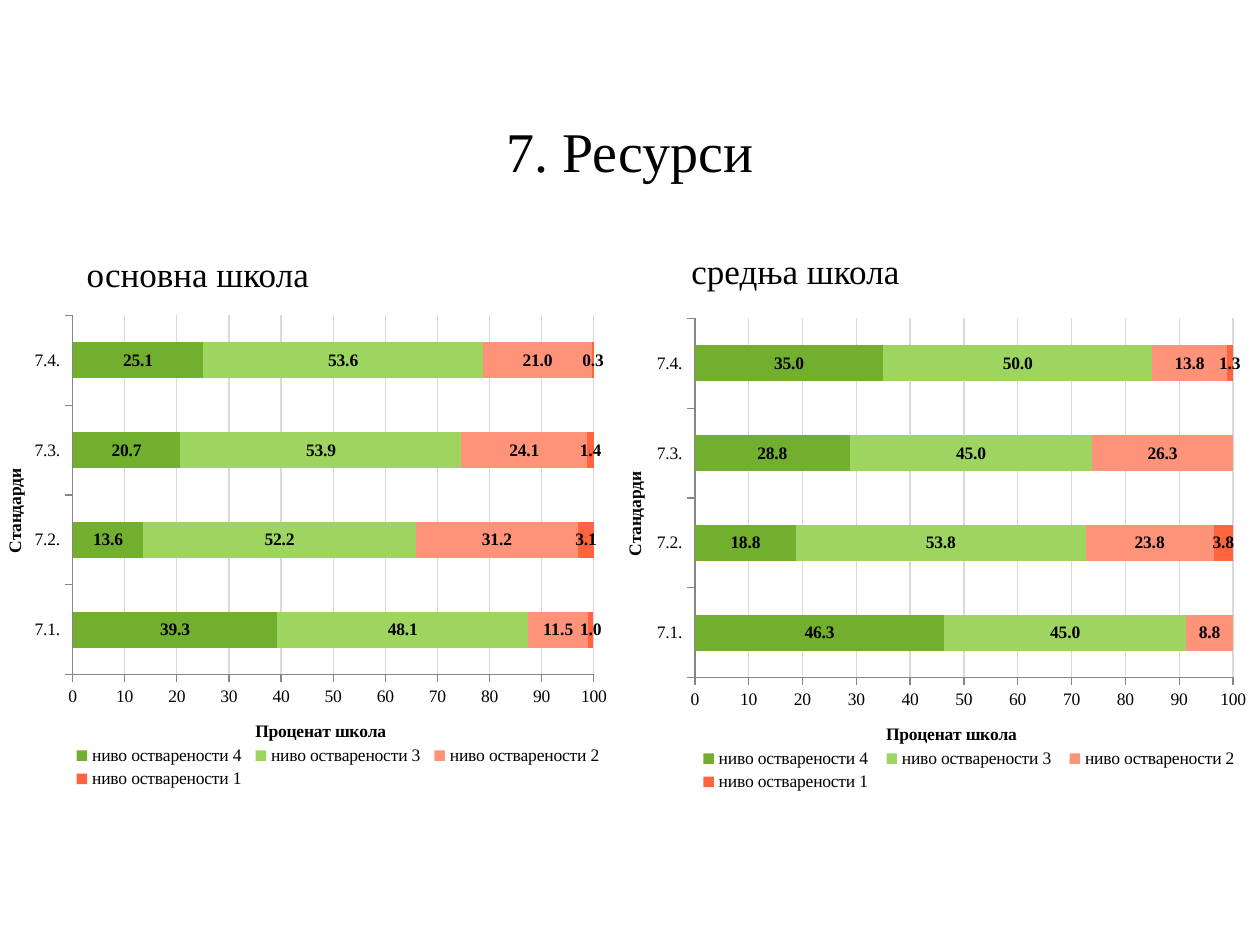
from dataclasses import dataclass
from typing import Any

from lxml.etree import SubElement
from pptx import Presentation
from pptx.chart.data import CategoryChartData
from pptx.dml.color import RGBColor
from pptx.enum.chart import XL_CHART_TYPE, XL_LABEL_POSITION, XL_LEGEND_POSITION, XL_TICK_MARK
from pptx.enum.text import MSO_ANCHOR, PP_ALIGN
from pptx.oxml.ns import qn
from pptx.util import Pt


@dataclass(frozen=True)
class Theme:
    font: str = "Times New Roman"
    text: RGBColor = RGBColor(0, 0, 0)
    grid: RGBColor = RGBColor(0xD9, 0xD9, 0xD9)
    axis: RGBColor = RGBColor(0x86, 0x86, 0x86)
    levels: tuple[str, ...] = ("72AF2F", "9ED561", "FF9379", "FF643F")
    title_size: int = 32
    heading_size: int = 20
    chart_size: int = 10


@dataclass(frozen=True)
class Box:
    left: float
    top: float
    width: float
    height: float

    def lengths(self) -> tuple[Pt, ...]:
        return Pt(self.left), Pt(self.top), Pt(self.width), Pt(self.height)


@dataclass(frozen=True)
class SchoolPanel:
    heading: str
    heading_box: Box
    chart_box: Box
    values: tuple[tuple[float, ...], ...]


THEME = Theme()
STANDARDS = ("7.1.", "7.2.", "7.3.", "7.4.")
LEVELS = tuple(f"ниво остварености {level}" for level in (4, 3, 2, 1))
PLOT_LAYOUT = {"x": 0.117, "y": 0.039, "w": 0.841, "h": 0.724}
LEGEND_LAYOUT = {"x": 0.11, "y": 0.9, "w": 0.87, "h": 0.1}
PANELS = (
    SchoolPanel(
        "основна школа",
        Box(42.5, 141, 164, 31.5),
        Box(0, 169.2, 354.3, 283.5),
        (
            (39.3, 13.6, 20.7, 25.1),
            (48.1, 52.2, 53.9, 53.6),
            (11.5, 31.2, 24.1, 21.0),
            (1.0, 3.1, 1.4, 0.3),
        ),
    ),
    SchoolPanel(
        "средња школа",
        Box(388, 139, 164, 31.5),
        Box(354.3, 170.9, 365.7, 283.5),
        (
            (46.3, 18.8, 28.8, 35.0),
            (45.0, 53.8, 45.0, 50.0),
            (8.8, 23.8, 26.3, 13.8),
            (0.0, 3.8, 0.0, 1.3),
        ),
    ),
)


def apply_format(target: Any, values: dict[str, Any]) -> None:
    for name, value in values.items():
        setattr(target, name, value)


def style_font(font: Any, size: int, bold: bool = False) -> None:
    apply_format(font, {"name": THEME.font, "size": Pt(size), "bold": bold})
    font.color.rgb = THEME.text


def add_text(slide: Any, text: str, box: Box, size: int, alignment: PP_ALIGN, anchor: MSO_ANCHOR) -> None:
    frame = slide.shapes.add_textbox(*box.lengths()).text_frame
    apply_format(frame, {"word_wrap": True, "vertical_anchor": anchor, "text": text})
    paragraph = frame.paragraphs[0]
    paragraph.alignment = alignment
    style_font(paragraph.runs[0].font, size)


def set_layout(layout: Any, fractions: dict[str, float], inner: bool = False) -> None:
    for child in list(layout):
        layout.remove(child)
    manual = SubElement(layout, qn("c:manualLayout"))
    settings = {"layoutTarget": "inner"} if inner else {}
    settings |= {"xMode": "edge", "yMode": "edge"} | fractions
    for name, value in settings.items():
        SubElement(manual, qn(f"c:{name}")).set("val", str(value))


def style_axis(axis: Any, title: str, gridlines: bool) -> None:
    apply_format(axis, {
        "has_major_gridlines": gridlines,
        "major_tick_mark": XL_TICK_MARK.OUTSIDE,
        "minor_tick_mark": XL_TICK_MARK.NONE,
        "has_title": True,
    })
    axis.format.line.color.rgb = THEME.axis
    axis.format.line.width = Pt(0.75)
    style_font(axis.tick_labels.font, THEME.chart_size)
    frame = axis.axis_title.text_frame
    frame.text = title
    style_font(frame.paragraphs[0].runs[0].font, THEME.chart_size, bold=True)


def style_series(series: Any, color: str) -> None:
    series.format.fill.solid()
    series.format.fill.fore_color.rgb = RGBColor.from_string(color)
    labels = series.data_labels
    apply_format(labels, {
        "show_value": True,
        "number_format": "0.0",
        "number_format_is_linked": False,
        "position": XL_LABEL_POSITION.CENTER,
    })
    style_font(labels.font, THEME.chart_size, bold=True)


def add_level_chart(slide: Any, panel: SchoolPanel) -> None:
    data = CategoryChartData(number_format="0.0")
    data.categories = STANDARDS
    for name, values in zip(LEVELS, panel.values):
        data.add_series(name, values)
    chart = slide.shapes.add_chart(XL_CHART_TYPE.BAR_STACKED, *panel.chart_box.lengths(), data).chart
    apply_format(chart, {"has_title": False, "has_legend": True})
    style_font(chart.font, THEME.chart_size)

    plot = chart.plots[0]
    apply_format(plot, {"gap_width": 150, "overlap": 100, "vary_by_categories": False})
    for series, color in zip(plot.series, THEME.levels):
        style_series(series, color)

    style_axis(chart.category_axis, "Стандарди", gridlines=False)
    value_axis = chart.value_axis
    style_axis(value_axis, "Проценат школа", gridlines=True)
    apply_format(value_axis, {"minimum_scale": 0, "maximum_scale": 100, "major_unit": 10})
    apply_format(value_axis.tick_labels, {"number_format": "0", "number_format_is_linked": False})
    grid_line = value_axis.major_gridlines.format.line
    grid_line.color.rgb = THEME.grid
    grid_line.width = Pt(0.75)

    legend = chart.legend
    apply_format(legend, {"position": XL_LEGEND_POSITION.RIGHT, "include_in_layout": False})
    style_font(legend.font, THEME.chart_size)
    chart_root = chart.element
    plot_area = chart_root.find(f".//{qn('c:plotArea')}")
    legend_root = chart_root.find(f".//{qn('c:legend')}")
    for parent, index, fractions, inner in (
        (plot_area, 0, PLOT_LAYOUT, True),
        (legend_root, 1, LEGEND_LAYOUT, False),
    ):
        layout = parent.find(qn("c:layout"))
        if layout is None:
            layout = SubElement(parent, qn("c:layout"))
            parent.insert(index, layout)
        set_layout(layout, fractions, inner)


def main() -> None:
    presentation = Presentation()
    apply_format(presentation, {"slide_width": Pt(720), "slide_height": Pt(540)})
    slide = presentation.slides.add_slide(presentation.slide_layouts[6])
    add_text(slide, "7. Ресурси", Box(36, 60.5, 648, 51), THEME.title_size, PP_ALIGN.CENTER, MSO_ANCHOR.MIDDLE)
    for panel in PANELS:
        add_text(slide, panel.heading, panel.heading_box, THEME.heading_size, PP_ALIGN.LEFT, MSO_ANCHOR.TOP)
    for panel in PANELS:
        add_level_chart(slide, panel)
    presentation.save("out.pptx")


if __name__ == "__main__":
    main()
